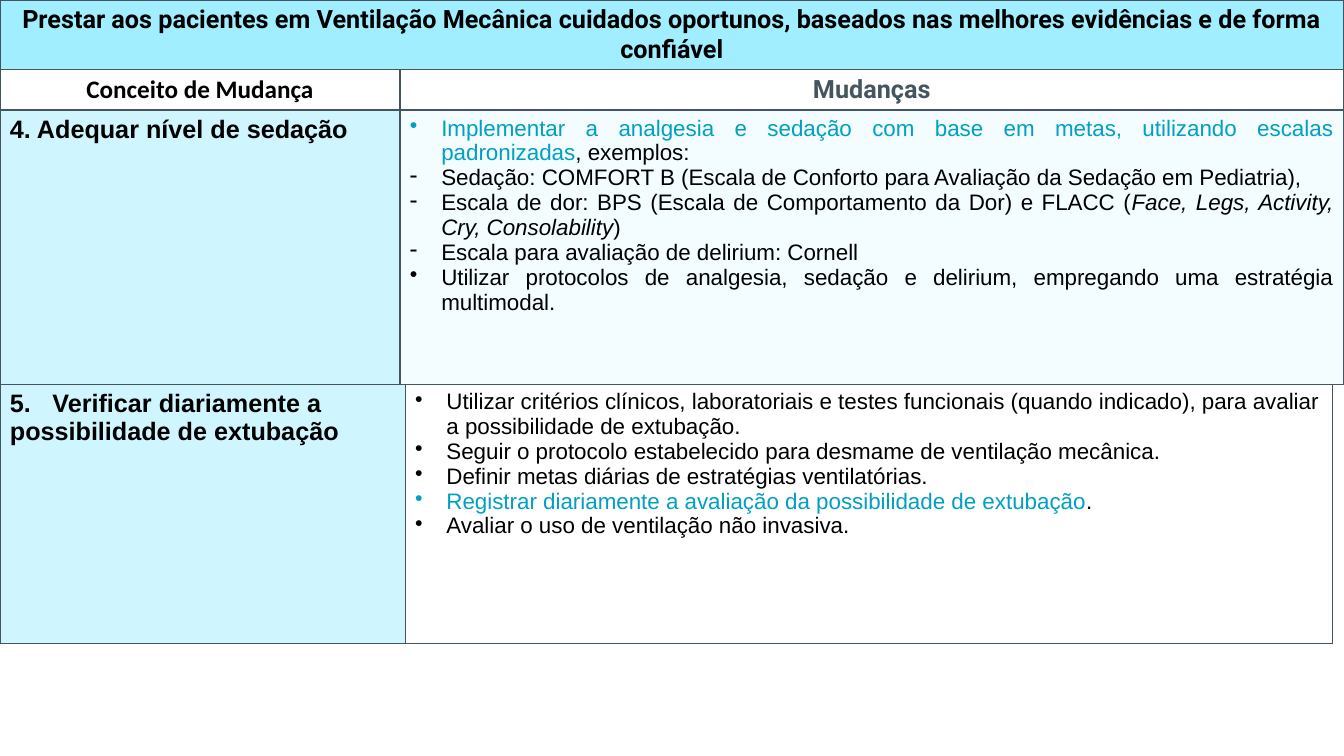
from dataclasses import dataclass

from lxml import etree
from pptx import Presentation
from pptx.dml.color import RGBColor
from pptx.enum.text import MSO_ANCHOR, PP_ALIGN
from pptx.oxml.ns import qn
from pptx.util import Cm, Pt

LEFT, CENTER, JUSTIFY = PP_ALIGN.LEFT, PP_ALIGN.CENTER, PP_ALIGN.JUSTIFY
TOP, MIDDLE = MSO_ANCHOR.TOP, MSO_ANCHOR.MIDDLE

COLORS = {
    "title": "A0EEFF",
    "concept": "CFF6FF",
    "changes": "F3FCFF",
    "white": "FFFFFF",
    "black": "000000",
    "accent": "009FC3",
    "slate": "455560",
}
BULLET_INDENT = Cm(0.79)
NUMBER_TAB = Cm(1.07)


@dataclass(frozen=True)
class Span:
    text: str
    color: str = "black"
    italic: bool = False


@dataclass(frozen=True)
class Para:
    spans: tuple[Span, ...]
    align: int = LEFT
    bullet: str = ""


@dataclass(frozen=True)
class CellBox:
    paras: tuple[Para, ...]
    fill: str = ""
    font: str = "Arial"
    size: int = 18
    bold: bool = True
    anchor: int = TOP
    margins: tuple[float, ...] = (0.25, 0.25, 0.13, 0.13)


@dataclass(frozen=True)
class Grid:
    top: float
    columns: tuple[float, ...]
    heights: tuple[float, ...]
    rows: tuple[tuple[CellBox, ...], ...]


def line(*spans: Span, align: int = LEFT, bullet: str = "") -> Para:
    return Para(spans, align, bullet)


def heading(text: str, color: str = "black", **formats) -> CellBox:
    return CellBox((line(Span(text, color), align=CENTER),), **formats)


def concept(text: str) -> CellBox:
    return CellBox((line(Span(text)),), fill="concept")


def changes(*paras: Para, fill: str = "") -> CellBox:
    return CellBox(paras, fill=fill, size=16, bold=False)


GRIDS = (
    Grid(0, (10.08, 23.78), (1.73, 1.0), (
        (heading("Prestar aos pacientes em Ventilação Mecânica cuidados oportunos, "
                 "baseados nas melhores evidências e de forma confiável",
                 fill="title", font="Roboto"),),
        (heading("Conceito de Mudança", fill="white", font="Calibri",
                 anchor=MIDDLE, margins=(0.03, 0.03, 0.03, 0)),
         heading("Mudanças", "slate", fill="white", font="Roboto", anchor=MIDDLE)),
    )),
    Grid(2.79, (10.08, 23.78), (6.89,), ((
        concept("4. Adequar nível de sedação"),
        changes(
            line(Span("Implementar a analgesia e sedação com base em metas, "
                      "utilizando escalas padronizadas", "accent"),
                 Span(", exemplos:"), align=JUSTIFY, bullet="•"),
            line(Span("Sedação: COMFORT B (Escala de Conforto para Avaliação "
                      "da Sedação em Pediatria),"), bullet="-"),
            line(Span("Escala de dor: BPS (Escala de Comportamento da Dor) e FLACC ("),
                 Span("Face, Legs, Activity, Cry, Consolability", italic=True),
                 Span(")"), align=JUSTIFY, bullet="-"),
            line(Span("Escala para avaliação de delirium: Cornell"), bullet="-"),
            line(Span("Utilizar protocolos de analgesia, sedação e delirium, "
                      "empregando uma estratégia multimodal."),
                 align=JUSTIFY, bullet="•"),
            fill="changes",
        ),
    ),)),
    Grid(9.68, (10.21, 23.37), (6.53,), ((
        concept("5.\tVerificar diariamente a possibilidade de extubação"),
        changes(
            line(Span("Utilizar critérios clínicos, laboratoriais e testes funcionais "
                      "(quando indicado), para avaliar a possibilidade de extubação."),
                 bullet="•"),
            line(Span("Seguir o protocolo estabelecido para desmame de "
                      "ventilação mecânica."), bullet="•"),
            line(Span("Definir metas diárias de estratégias ventilatórias."), bullet="•"),
            line(Span("Registrar diariamente a avaliação da possibilidade de extubação",
                      "accent"), Span("."), bullet="•"),
            line(Span("Avaliar o uso de ventilação não invasiva."), bullet="•"),
        ),
    ),)),
)


def add_borders(cell) -> None:
    properties = cell._tc.get_or_add_tcPr()
    for side in ("a:lnL", "a:lnR", "a:lnT", "a:lnB"):
        border = etree.SubElement(properties, qn(side), w=str(Pt(1)))
        solid = etree.SubElement(border, qn("a:solidFill"))
        etree.SubElement(solid, qn("a:srgbClr"), val=COLORS["slate"])


def write_para(paragraph, para: Para, box: CellBox) -> None:
    paragraph.alignment = para.align
    properties = paragraph._p.get_or_add_pPr()
    if para.bullet:
        properties.set("marL", str(BULLET_INDENT))
        properties.set("indent", str(-BULLET_INDENT))
        etree.SubElement(properties, qn("a:buChar"), char=para.bullet)
    if "\t" in para.spans[0].text:
        tabs = etree.SubElement(properties, qn("a:tabLst"))
        etree.SubElement(tabs, qn("a:tab"), pos=str(NUMBER_TAB), algn="l")
    for span in para.spans:
        run = paragraph.add_run()
        run.text = span.text
        run.font.name = box.font
        run.font.size = Pt(box.size)
        run.font.bold = box.bold
        run.font.italic = span.italic
        run.font.color.rgb = RGBColor.from_string(COLORS[span.color])


def fill_cell(cell, box: CellBox) -> None:
    if box.fill:
        cell.fill.solid()
        cell.fill.fore_color.rgb = RGBColor.from_string(COLORS[box.fill])
    else:
        cell.fill.background()
    cell.vertical_anchor = box.anchor
    left, right, top, bottom = map(Cm, box.margins)
    cell.margin_left, cell.margin_right = left, right
    cell.margin_top, cell.margin_bottom = top, bottom
    frame = cell.text_frame
    for index, para in enumerate(box.paras):
        write_para(frame.add_paragraph() if index else frame.paragraphs[0], para, box)


def draw_grid(page, grid: Grid) -> None:
    table = page.shapes.add_table(
        len(grid.heights), len(grid.columns), Cm(0), Cm(grid.top),
        Cm(sum(grid.columns)), Cm(sum(grid.heights))).table
    table.first_row = table.horz_banding = False
    for column, width in zip(table.columns, grid.columns):
        column.width = Cm(width)
    for row, height in zip(table.rows, grid.heights):
        row.height = Cm(height)
    for cell in table.iter_cells():
        add_borders(cell)
    for row_index, boxes in enumerate(grid.rows):
        if len(boxes) < len(grid.columns):
            table.cell(row_index, 0).merge(table.cell(row_index, len(grid.columns) - 1))
        for column_index, box in enumerate(boxes):
            fill_cell(table.cell(row_index, column_index), box)


def main() -> None:
    deck = Presentation()
    deck.slide_width, deck.slide_height = Cm(33.87), Cm(19.05)
    page = deck.slides.add_slide(deck.slide_layouts[6])
    for grid in GRIDS:
        draw_grid(page, grid)
    deck.save("out.pptx")


if __name__ == "__main__":
    main()
